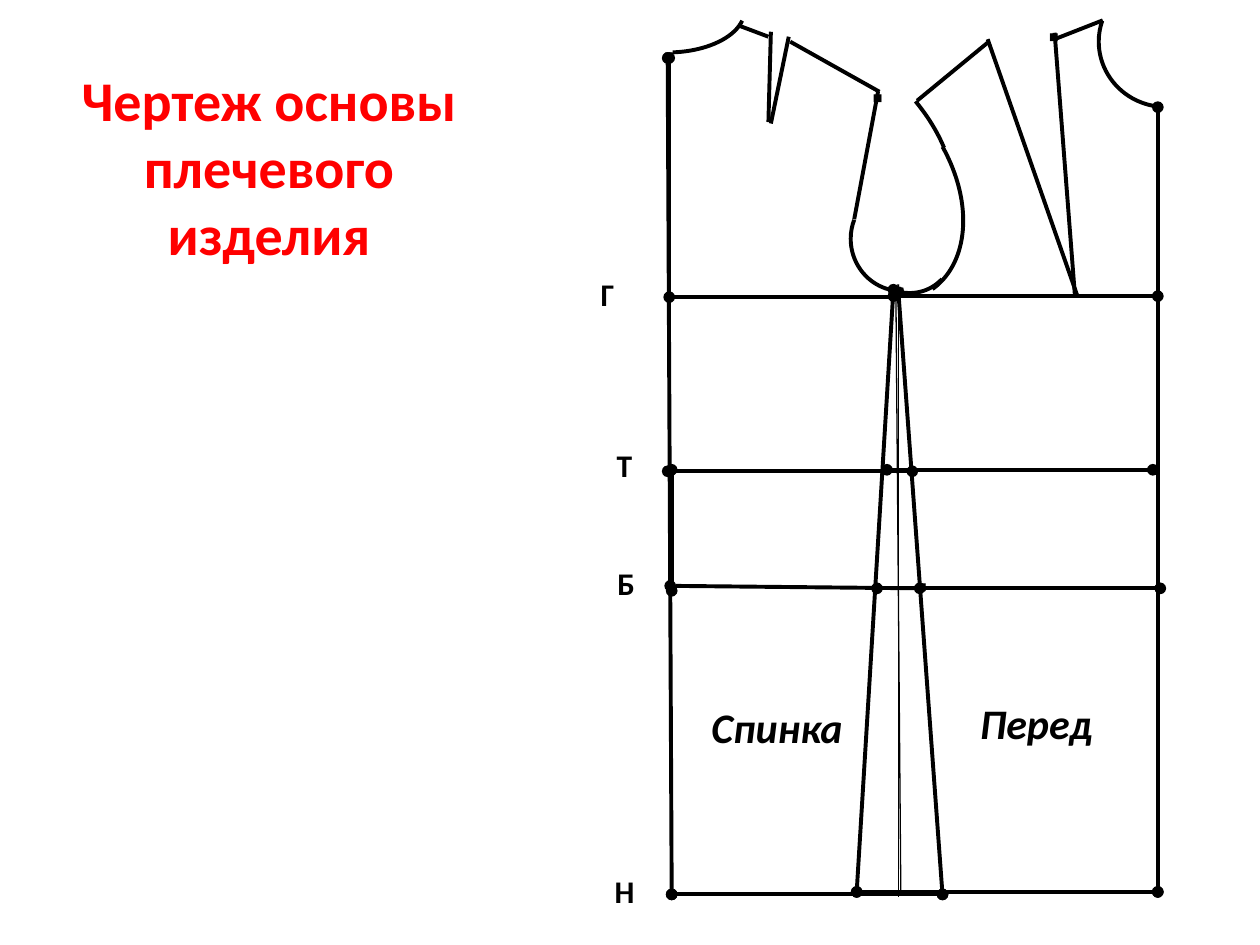
import pptx
import pptx.util
import pptx.dml.color
import pptx.enum.shapes
import pptx.enum.text
import lxml.etree

Cm, Pt = pptx.util.Cm, pptx.util.Pt
BLACK = pptx.dml.color.RGBColor(0, 0, 0)
RED = pptx.dml.color.RGBColor(0xFF, 0, 0)
NS = "{http://schemas.openxmlformats.org/drawingml/2006/main}"
ARC = pptx.enum.shapes.MSO_SHAPE.ARC
LINE = pptx.enum.shapes.MSO_CONNECTOR.STRAIGHT
FIT = pptx.enum.text.MSO_AUTO_SIZE


def draw(group, ends, width=2.25, dots=False):
    line = group.shapes.add_connector(LINE, *[Cm(v) for v in ends])
    line.line.color.rgb = BLACK
    line.line.width = Pt(width)
    if dots:
        edge = line.line._get_or_add_ln()
        for tag in ("headEnd", "tailEnd"):
            lxml.etree.SubElement(edge, NS + tag, type="oval")
    lxml.etree.SubElement(line._element.spPr, NS + "effectLst")


def write(frame, words, size, font, color, bold, slant=False):
    frame.word_wrap = True
    para = frame.paragraphs[0]
    para.alignment = pptx.enum.text.PP_ALIGN.CENTER
    run = para.add_run()
    run.text = words
    run.font.size = Pt(size)
    run.font.name = font
    run.font.bold = bold
    run.font.italic = slant
    run.font.color.rgb = color


deck = pptx.Presentation()
deck.slide_width, deck.slide_height = Cm(25.4), Cm(19.05)
slide = deck.slides.add_slide(deck.slide_layouts[5])

# Title
title = slide.shapes.title
title.left, title.top, title.width, title.height = Cm(0.51), Cm(1.19), Cm(9.83), Cm(4.37)
title.text_frame.vertical_anchor = pptx.enum.text.MSO_ANCHOR.TOP
title.text_frame.auto_size = FIT.SHAPE_TO_FIT_TEXT
write(title.text_frame, "Чертеж основы плечевого изделия", 32, "Calibri", RED, True)

# Back: arcs hold box, turn and two adjustments; lines hold end points
back = {
    "arcs": [
        (11.89, -0.64, 3.12, 1.7, 0, 4.71, 49.44),      # neck
        (17.15, 3.76, 2.06, 2.11, 0, 52.98, 121.05),    # armhole
    ],
    "dotted": [
        (13.46, 1.17, 13.54, 18.03),    # centre back
        (13.49, 1.17, 13.49, 5.99),
        (13.54, 9.47, 13.54, 11.91),
        (13.54, 18.03, 19, 18.03),      # hem
        (13.46, 9.5, 18.39, 9.5),       # waist
        (13.51, 11.81, 18.54, 11.86),   # hips
        (18.11, 5.89, 19, 18.03),       # side seam
    ],
    "plain": [
        (13.46, 5.99, 18.11, 5.99),     # chest
        (13.46, 5.99, 17.02, 5.99),
        (14.88, 0.51, 15.49, 0.74),     # shoulder and dart
        (15.54, 0.64, 15.49, 2.46),
        (15.54, 2.49, 15.9, 0.74),
        (15.93, 0.84, 17.73, 1.85),
        (17.7, 1.85, 17.22, 4.42),      # armhole
    ],
    "thin": (18.11, 5.97, 18.11, 18.08),
    "marks": [
        ("▪", 12.88, 0.58, 1.22, 1.17),
        ("*", 17.5, 5.41, 1.22, 1.17),
        ("▪", 17.3, 1.42, 0.79, 1.02),
        ("▪", 18.19, 11.28, 0.79, 1.02),
    ],
    "levels": [
        ("Г", 11.33, 5.41, 1.83, 1.17),
        ("Т", 11.84, 8.86, 1.5, 1.17),
        ("Б", 11.99, 11.25, 1.27, 1.17),
        ("Н", 11.61, 17.45, 1.96, 1.17),
    ],
    "name": ("Спинка", 13.67, 14.02, 3.99, 1.27),
}

# Front
front = {
    "arcs": [
        (13.11, 0.91, 6.43, 4.83, 37.9, 174.64, 188.86),    # armhole
        (16.89, 3.58, 2.59, 2.13, 67.4, 205.96, 16.81),
        (14.63, 1.83, 5.26, 3.73, 54.2, 169.78, 0),
        (22.15, -0.48, 2.72, 2.64, 0, 60.38, 118.83),       # neck
    ],
    "dotted": [
        (23.34, 2.16, 23.34, 17.98),    # centre front
        (18.01, 5.97, 23.34, 5.97),     # chest
        (17.88, 9.47, 23.24, 9.47),     # waist
        (17.68, 11.86, 23.39, 11.86),   # hips
        (17.27, 17.98, 23.34, 17.98),   # hem
        (18.01, 5.84, 17.27, 17.98),    # side seam
    ],
    "plain": [
        (21.67, 5.97, 21.26, 0.66),     # chest dart
        (21.72, 5.97, 19.91, 0.79),
        (19.91, 0.86, 18.49, 2.03),     # shoulder
        (22.23, 0.41, 21.26, 0.79),
    ],
    "thin": (18.06, 5.87, 18.16, 18.03),
    "marks": [("▪", 20.75, 0.2, 0.99, 1.02)],
    "levels": [],
    "name": ("Перед", 19.02, 13.94, 3.73, 1.27),
}

for part in (back, front):
    group = slide.shapes.add_group_shape()

    # Curves
    for *box, turn, start, end in part["arcs"]:
        arc = group.shapes.add_shape(ARC, *[Cm(v) for v in box])
        arc.adjustments[0], arc.adjustments[1] = start, end
        arc.rotation = turn
        arc.shadow.inherit = False
        arc.fill.background()
        arc.line.color.rgb = BLACK
        arc.line.width = Pt(2.25)

    # Straight lines
    for ends in part["dotted"]:
        draw(group, ends, dots=True)
    for ends in part["plain"]:
        draw(group, ends)
    draw(group, part["thin"], 0.75)

    # Marks, level letters and part name
    styles = [
        (part["marks"], (18, "Arial", BLACK, False)),
        (part["levels"], (18, "Calibri", BLACK, True)),
        ([part["name"]], (24, "Calibri", BLACK, True, True)),
    ]
    for labels, style in styles:
        for words, *box in labels:
            label = group.shapes.add_textbox(*[Cm(v) for v in box])
            label.text_frame.auto_size = FIT.SHAPE_TO_FIT_TEXT
            write(label.text_frame, words, *style)

deck.save("out.pptx")
